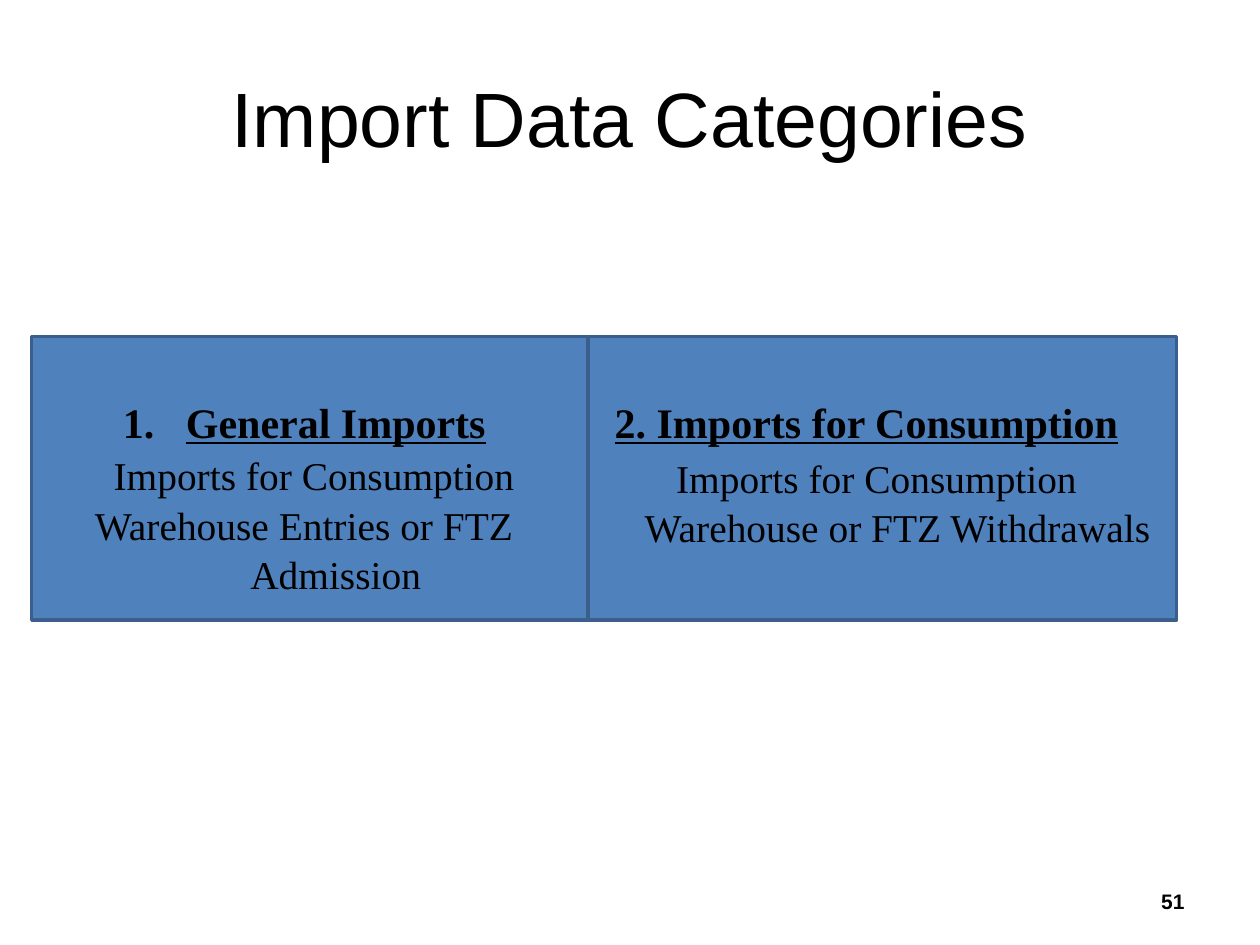
from dataclasses import dataclass
from typing import Any

from lxml import etree
from pptx import Presentation
from pptx.dml.color import RGBColor
from pptx.enum.shapes import MSO_SHAPE
from pptx.enum.text import MSO_ANCHOR, PP_ALIGN
from pptx.oxml.ns import qn
from pptx.util import Cm, Pt

RECT = MSO_SHAPE.RECTANGLE
TOP, MIDDLE = MSO_ANCHOR.TOP, MSO_ANCHOR.MIDDLE
CENTER, RIGHT = PP_ALIGN.CENTER, PP_ALIGN.RIGHT


@dataclass(frozen=True)
class Theme:
    ink: RGBColor = RGBColor(0, 0, 0)
    fill: RGBColor = RGBColor(0x4F, 0x81, 0xBD)
    edge: RGBColor = RGBColor(0x3A, 0x5F, 0x8C)
    sans: str = "Arial"
    serif: str = "Times New Roman"
    title: float = 44
    head: float = 24
    body: float = 22.5
    page: float = 12


THEME = Theme()
TITLE = {"name": THEME.sans, "size": Pt(THEME.title)}
PAGE = {"name": THEME.sans, "size": Pt(THEME.page), "bold": True}
HEAD = {"name": THEME.serif, "size": Pt(THEME.head), "bold": True, "underline": True}
BODY = {"name": THEME.serif, "size": Pt(THEME.body)}


@dataclass(frozen=True)
class Box:
    left: float
    top: float
    width: float
    height: float

    def place(self) -> tuple[Cm, Cm, Cm, Cm]:
        return Cm(self.left), Cm(self.top), Cm(self.width), Cm(self.height)


@dataclass(frozen=True)
class Line:
    text: str
    style: dict[str, Any]
    align: PP_ALIGN = CENTER
    margin: float = 0
    indent: float = 0
    before: float = 0
    spacing: float = 1
    number: bool = False


@dataclass(frozen=True)
class Panel:
    rect: Box
    text: Box
    lines: tuple[Line, ...]


def apply(target: Any, values: dict[str, Any]) -> None:
    for name, value in values.items():
        setattr(target, name, value)


def write(frame: Any, lines: tuple[Line, ...], anchor: MSO_ANCHOR) -> None:
    apply(frame, {"word_wrap": True, "vertical_anchor": anchor})
    for index, line in enumerate(lines):
        para = frame.add_paragraph() if index else frame.paragraphs[0]
        apply(para, {
            "alignment": line.align,
            "line_spacing": line.spacing,
            "space_before": Pt(line.before),
        })
        props = para._p.get_or_add_pPr()
        props.set("marL", str(Cm(line.margin)))
        props.set("indent", str(Cm(line.indent)))
        if line.number:
            etree.SubElement(props, qn("a:buAutoNum"), type="arabicPeriod")
        run = para.add_run()
        run.text = line.text
        apply(run.font, line.style)
        run.font.color.rgb = THEME.ink


def add_text(slide: Any, box: Box, lines: tuple[Line, ...], anchor: MSO_ANCHOR) -> None:
    write(slide.shapes.add_textbox(*box.place()).text_frame, lines, anchor)


def add_rect(slide: Any, box: Box) -> None:
    shape = slide.shapes.add_shape(RECT, *box.place())
    shape.shadow.inherit = False
    shape.fill.solid()
    shape.fill.fore_color.rgb = THEME.fill
    shape.line.color.rgb = THEME.edge
    shape.line.width = Pt(2)


PANELS = (
    Panel(
        Box(0.64, 6.78, 11.22, 5.72),
        Box(0.84, 7.82, 10.59, 5.18),
        (
            Line("General Imports", HEAD, margin=1.27, indent=-1.27,
                 spacing=1.05, number=True),
            Line("Imports for Consumption", BODY, margin=1.27, indent=-0.87,
                 before=1, spacing=1.05),
            Line("Warehouse Entries or FTZ Admission", BODY, margin=1.27,
                 indent=-1.27, spacing=1.05),
        ),
    ),
    Panel(
        Box(11.86, 6.78, 11.86, 5.72),
        Box(11.43, 7.82, 12.07, 3.28),
        (
            Line("2. Imports for Consumption", HEAD, spacing=1.05),
            Line("Imports for Consumption Warehouse or FTZ Withdrawals", BODY,
                 margin=1.27, indent=-0.85, before=2.5, spacing=1.05),
        ),
    ),
)


def main() -> None:
    deck = Presentation()
    apply(deck, {"slide_width": Cm(25.4), "slide_height": Cm(19.05)})
    slide = deck.slides.add_slide(deck.slide_layouts[5])
    title = slide.shapes.title
    spot = Box(1.27, 0.76, 22.86, 3.18).place()
    apply(title, dict(zip(("left", "top", "width", "height"), spot)))
    write(title.text_frame, (Line("Import Data Categories", TITLE),), MIDDLE)
    add_text(slide, Box(18.21, 17.65, 5.92, 1.02), (Line("51", PAGE, RIGHT),), MIDDLE)
    for panel in PANELS:
        add_rect(slide, panel.rect)
    for panel in PANELS:
        add_text(slide, panel.text, panel.lines, TOP)
    deck.save("out.pptx")


if __name__ == "__main__":
    main()
